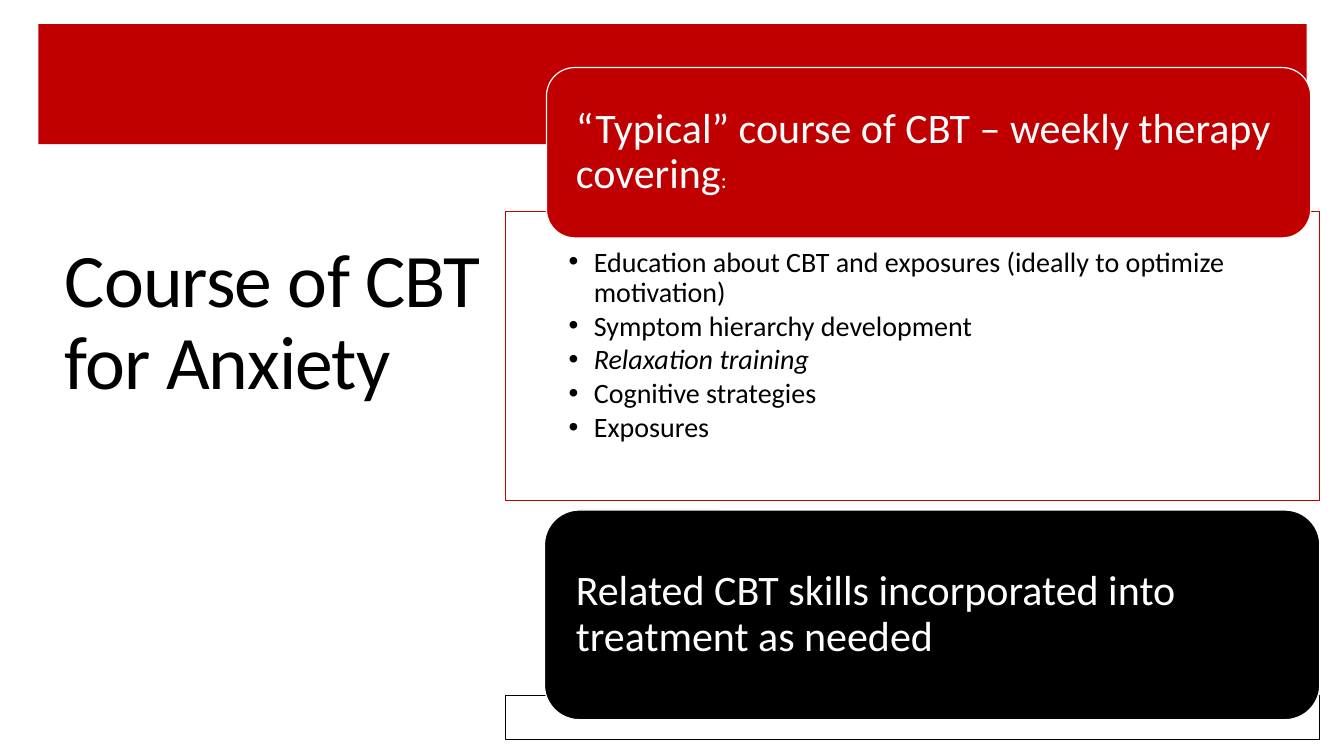
"""Build the slide on the course of CBT for anxiety."""
from dataclasses import dataclass
from typing import Optional

import lxml.etree
import pptx
import pptx.dml.color
import pptx.enum.shapes
import pptx.enum.text
import pptx.oxml.ns
import pptx.util

Inches = pptx.util.Inches
Pt = pptx.util.Pt
RGBColor = pptx.dml.color.RGBColor
Kind = pptx.enum.shapes.MSO_SHAPE
Anchor = pptx.enum.text.MSO_ANCHOR
Align = pptx.enum.text.PP_ALIGN
qn = pptx.oxml.ns.qn

RED = RGBColor(0xC0, 0x00, 0x00)
BLACK = RGBColor(0x00, 0x00, 0x00)
WHITE = RGBColor(0xFF, 0xFF, 0xFF)
FONT = "Calibri"
POINTS = (
    "Education about CBT and exposures (ideally to optimize motivation)",
    "Symptom hierarchy development",
    "Relaxation training",
    "Cognitive strategies",
    "Exposures",
)
ITALIC = "Relaxation training"


@dataclass
class Box:
    kind: Kind
    left: float
    top: float
    width: float
    height: float
    fill: RGBColor
    line: Optional[RGBColor] = None
    alpha: int = 100


BAND = Box(Kind.RECTANGLE, 0.38, 0.24, 12.58, 1.19, RED)
BODY = Box(Kind.RECTANGLE, 5.01, 2.1, 8.08, 2.87, WHITE, RED, 90)
COURSE = Box(Kind.ROUNDED_RECTANGLE, 5.42, 0.67, 7.58, 1.69, RED, WHITE)
BASE = Box(Kind.RECTANGLE, 5.01, 6.9, 8.08, 0.44, WHITE, BLACK, 90)
SKILLS = Box(Kind.ROUNDED_RECTANGLE, 5.4, 5.06, 7.69, 2.08, BLACK, WHITE)


def draw(slide, box: Box):
    shape = slide.shapes.add_shape(
        box.kind, Inches(box.left), Inches(box.top), Inches(box.width), Inches(box.height)
    )
    shape.shadow.inherit = False
    shape.fill.solid()
    shape.fill.fore_color.rgb = box.fill
    if box.alpha < 100:
        tint = shape.fill._xPr.find(".//" + qn("a:srgbClr"))
        lxml.etree.SubElement(tint, qn("a:alpha"), val=str(box.alpha * 1000))
    if box.line is None:
        shape.line.fill.background()
    else:
        shape.line.color.rgb = box.line
        shape.line.width = Pt(0.85)
    return shape


def inset(frame, side: float, top: float, bottom: float) -> None:
    frame.word_wrap = True
    frame.margin_left = frame.margin_right = Inches(side)
    frame.margin_top, frame.margin_bottom = Inches(top), Inches(bottom)


def style(para, size: float, color: RGBColor) -> None:
    para.alignment = Align.LEFT
    para.line_spacing = 0.9
    for run in para.runs:
        run.font.name = FONT
        run.font.size = Pt(size)
        run.font.color.rgb = color


def head(slide, box: Box, text: str):
    frame = draw(slide, box).text_frame
    inset(frame, 0.21, 0, 0)
    frame.vertical_anchor = Anchor.MIDDLE
    frame.text = text
    para = frame.paragraphs[0]
    style(para, 30, WHITE)
    return para


def listing(slide, box: Box) -> None:
    frame = draw(slide, box).text_frame
    inset(frame, 0.63, 0.36, 0.16)
    frame.vertical_anchor = Anchor.TOP
    frame.text = "\n".join(POINTS)
    for para in frame.paragraphs:
        props = para._p.get_or_add_pPr()
        props.set("marL", str(Inches(0.25)))
        props.set("indent", str(-Inches(0.25)))
        lxml.etree.SubElement(props, qn("a:buFont"), typeface="Arial")
        lxml.etree.SubElement(props, qn("a:buChar"), char="•")
        style(para, 20, BLACK)
        para.space_after = Pt(2.5)
        para.runs[0].font.italic = para.text == ITALIC


def heading(slide) -> None:
    title = slide.shapes.title
    title.left, title.top = Inches(0.54), Inches(0.16)
    title.width, title.height = Inches(4.47), Inches(6.11)
    frame = title.text_frame
    frame.word_wrap = True
    frame.vertical_anchor = Anchor.MIDDLE
    frame.text = "Course of CBT for Anxiety"
    para = frame.paragraphs[0]
    style(para, 54, BLACK)
    para.runs[0]._r.get_or_add_rPr().set("spc", "-60")


def main() -> None:
    deck = pptx.Presentation()
    deck.slide_width, deck.slide_height = Inches(13.33), Inches(7.5)
    slide = deck.slides.add_slide(deck.slide_layouts[5])
    heading(slide)
    band = draw(slide, BAND)
    slide.shapes.title._element.addprevious(band._element)
    listing(slide, BODY)
    para = head(slide, COURSE, "“Typical” course of CBT – weekly therapy covering")
    colon = para.add_run()
    colon.text = ":"
    style(para, 30, WHITE)
    colon.font.size = Pt(16)
    draw(slide, BASE)
    head(slide, SKILLS, "Related CBT skills incorporated into treatment as needed")
    deck.save("out.pptx")


if __name__ == "__main__":
    main()
